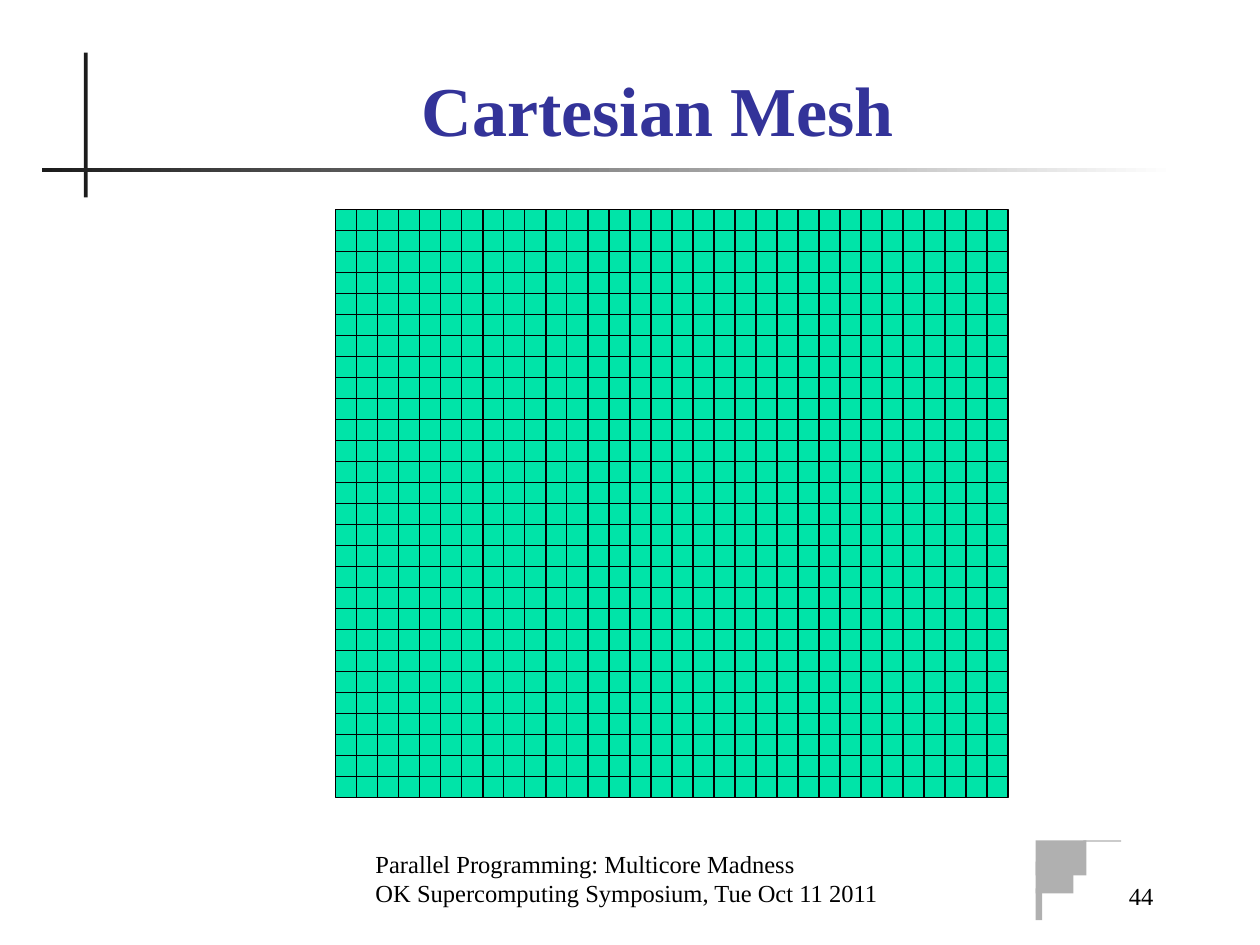
from lxml.etree import SubElement
from pptx import Presentation
from pptx.dml.color import RGBColor
from pptx.enum.shapes import MSO_CONNECTOR as Connector, MSO_SHAPE as Shape
from pptx.enum.text import MSO_ANCHOR as Anchor, PP_ALIGN as Align
from pptx.oxml.ns import qn
from pptx.util import Cm, Pt

COLORS = {
    "title": "333399",
    "text": "000000",
    "rule": "1C1C1C",
    "fade": "FFFFFF",
    "ornament": "B0B0B0",
    "mesh": "00E4A8",
    "grid": "000000",
}
FONT = "Times New Roman"

TEXTS = [
    (["Parallel Programming: Multicore Madness",
      "OK Supercomputing Symposium, Tue Oct 11 2011"],
     (7.32, 17.15, 11.1, 1.27), Align.LEFT, 14, False, "text"),
    (["44"], (19.89, 17.2, 3.61, 1.27), Align.RIGHT, 14, False, "text"),
    (["Cartesian Mesh"], (2.12, 1.27, 22.28, 1.88), Align.CENTER, 40, True, "title"),
]
VERTICAL_RULE = (1.69, 1.06, 0.08, 2.92)
HORIZONTAL_RULE = (0.85, 3.39, 22.86, 0.08)
ORNAMENT = [
    (20.88, 16.94, 1.02, 0.71),
    (20.88, 17.37, 0.76, 0.64),
    (20.88, 17.91, 0.13, 0.64),
    (21.84, 16.94, 0.76, 0.03),
]
MESH = (6.77, 4.23, 13.55, 11.85)
COLUMNS, ROWS = 32, 28
GRID_WIDTH = Pt(0.75)


def rgb(name):
    return RGBColor.from_string(COLORS[name])


def add_block(shapes, box, color):
    block = shapes.add_shape(Shape.RECTANGLE, *map(Cm, box))
    block.shadow.inherit = False
    block.fill.solid()
    block.fill.fore_color.rgb = rgb(color)
    block.line.fill.background()
    return block


def add_grid_line(shapes, *ends):
    grid_line = shapes.add_connector(Connector.STRAIGHT, *map(Cm, ends))
    grid_line.line.color.rgb = rgb("grid")
    grid_line.line.width = GRID_WIDTH
    SubElement(grid_line._element.spPr, qn("a:effectLst"))


def add_mesh(slide):
    left, top, width, height = MESH
    mesh = slide.shapes.add_group_shape().shapes
    area = add_block(mesh, MESH, "mesh")
    area.line.color.rgb = rgb("grid")
    area.line.width = GRID_WIDTH
    for column in range(1, COLUMNS):
        x = left + width * column / COLUMNS
        add_grid_line(mesh, x, top, x, top + height)
    for row in range(1, ROWS):
        y = top + height * row / ROWS
        add_grid_line(mesh, left, y, left + width, y)


def add_text(slide, lines, box, align, size, bold, color):
    frame = slide.shapes.add_textbox(*map(Cm, box)).text_frame
    frame.word_wrap = True
    frame.vertical_anchor = Anchor.BOTTOM
    frame.text = "\n".join(lines)
    for paragraph in frame.paragraphs:
        paragraph.alignment = align
        font = paragraph.font
        font.name, font.size, font.bold = FONT, Pt(size), bold
        font.color.rgb = rgb(color)


def main():
    deck = Presentation()
    deck.slide_width, deck.slide_height = Cm(25.4), Cm(19.05)
    slide = deck.slides.add_slide(deck.slide_layouts[6])

    add_block(slide.shapes, VERTICAL_RULE, "rule")
    fading = add_block(slide.shapes, HORIZONTAL_RULE, "rule").fill
    fading.gradient()
    fading.gradient_angle = 0
    for stop, color in zip(fading.gradient_stops, ("rule", "fade")):
        stop.color.rgb = rgb(color)

    ornament = slide.shapes.add_group_shape().shapes
    for box in ORNAMENT:
        add_block(ornament, box, "ornament")

    add_mesh(slide)
    for text in TEXTS:
        add_text(slide, *text)
    deck.save("out.pptx")


if __name__ == "__main__":
    main()
